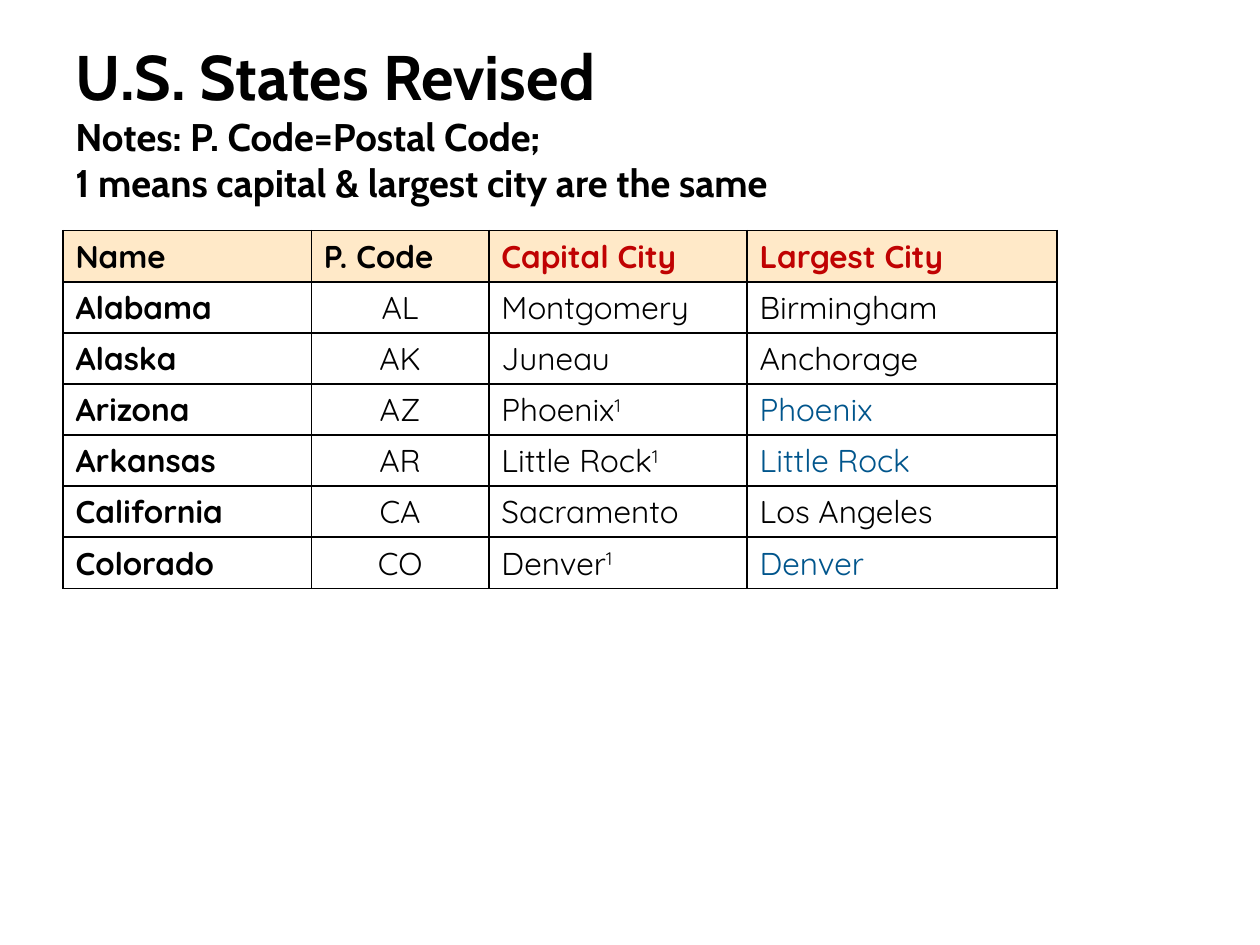
from dataclasses import dataclass

from lxml.etree import SubElement
from pptx import Presentation
from pptx.dml.color import RGBColor
from pptx.enum.text import MSO_ANCHOR, PP_ALIGN
from pptx.oxml.ns import qn
from pptx.util import Pt


@dataclass(frozen=True)
class Theme:
    heading_font: str = "Cabin"
    body_font: str = "Quicksand"
    ink: str = "000000"
    accent: str = "C00202"
    match: str = "00558C"
    header_fill: str = "FFE9C8"
    body_fill: str = "FFFFFF"
    title_size: int = 36
    subtitle_size: int = 22
    body_size: int = 18
    border: int = 1


THEME = Theme()
COLUMN_WIDTHS = (141.9, 101.5, 147.5, 177.1)
HEADERS = ("Name", "P. Code", "Capital City", "Largest City")
STATES = (
    ("Alabama", "AL", "Montgomery", "Birmingham"),
    ("Alaska", "AK", "Juneau", "Anchorage"),
    ("Arizona", "AZ", "Phoenix", "Phoenix"),
    ("Arkansas", "AR", "Little Rock", "Little Rock"),
    ("California", "CA", "Sacramento", "Los Angeles"),
    ("Colorado", "CO", "Denver", "Denver"),
)


def style_font(font, name, size, color, bold):
    font.name = name
    font.size = Pt(size)
    font.bold = bold
    font.color.rgb = RGBColor.from_string(color)


def add_heading(slide, left, top, width, height):
    heading = slide.shapes.add_textbox(Pt(left), Pt(top), Pt(width), Pt(height))
    frame = heading.text_frame
    frame.word_wrap = True
    frame.vertical_anchor = MSO_ANCHOR.BOTTOM
    frame.margin_bottom = Pt(2)
    paragraph = frame.paragraphs[0]
    style_font(paragraph.font, THEME.heading_font, THEME.subtitle_size, THEME.ink, True)
    title = paragraph.add_run()
    title.text = "U.S. States Revised"
    title.font.size = Pt(THEME.title_size)
    for explanation in ("Notes: P. Code=Postal Code;", "1 means capital & largest city are the same"):
        paragraph.add_line_break()
        paragraph.add_run().text = explanation


def draw_borders(cell):
    properties = cell._tc.get_or_add_tcPr()
    for side in ("a:lnL", "a:lnR", "a:lnT", "a:lnB"):
        line = SubElement(properties, qn(side), w=str(Pt(THEME.border)))
        fill = SubElement(line, qn("a:solidFill"))
        SubElement(fill, qn("a:srgbClr"), val=THEME.ink)


def fill_cell(cell, text, background, color, bold, centered=False, footnote=""):
    draw_borders(cell)
    cell.fill.solid()
    cell.fill.fore_color.rgb = RGBColor.from_string(background)
    paragraph = cell.text_frame.paragraphs[0]
    paragraph.alignment = PP_ALIGN.CENTER if centered else PP_ALIGN.LEFT
    style_font(paragraph.font, THEME.body_font, THEME.body_size, color, bold)
    paragraph.add_run().text = text
    if footnote:
        mark = paragraph.add_run()
        mark.text = footnote
        mark._r.get_or_add_rPr().set("baseline", "30000")


def add_states_table(slide, left, top, width, height):
    rows = len(STATES) + 1
    table = slide.shapes.add_table(
        rows, len(HEADERS), Pt(left), Pt(top), Pt(width), Pt(height)
    ).table
    table.horz_banding = False
    for column, column_width in zip(table.columns, COLUMN_WIDTHS):
        column.width = Pt(column_width)
    for row in table.rows:
        row.height = Pt(height / rows)

    for index, header in enumerate(HEADERS):
        color = THEME.accent if header.endswith("City") else THEME.ink
        fill_cell(table.cell(0, index), header, THEME.header_fill, color, True)

    for index, (name, code, capital, largest) in enumerate(STATES, start=1):
        same = capital == largest
        name_cell, code_cell, capital_cell, largest_cell = table.rows[index].cells
        fill_cell(name_cell, name, THEME.body_fill, THEME.ink, True)
        fill_cell(code_cell, code, THEME.body_fill, THEME.ink, False, centered=True)
        fill_cell(capital_cell, capital, THEME.body_fill, THEME.ink, False,
                  footnote="1" if same else "")
        fill_cell(largest_cell, largest, THEME.body_fill,
                  THEME.match if same else THEME.ink, False)


def main():
    presentation = Presentation()
    presentation.slide_width, presentation.slide_height = Pt(720), Pt(540)
    slide = presentation.slides.add_slide(presentation.slide_layouts[6])
    left, width = 36, sum(COLUMN_WIDTHS)
    add_heading(slide, left, 29.5, width, 90)
    add_states_table(slide, left, 131.8, width, 204.4)
    presentation.save("out.pptx")


if __name__ == "__main__":
    main()
